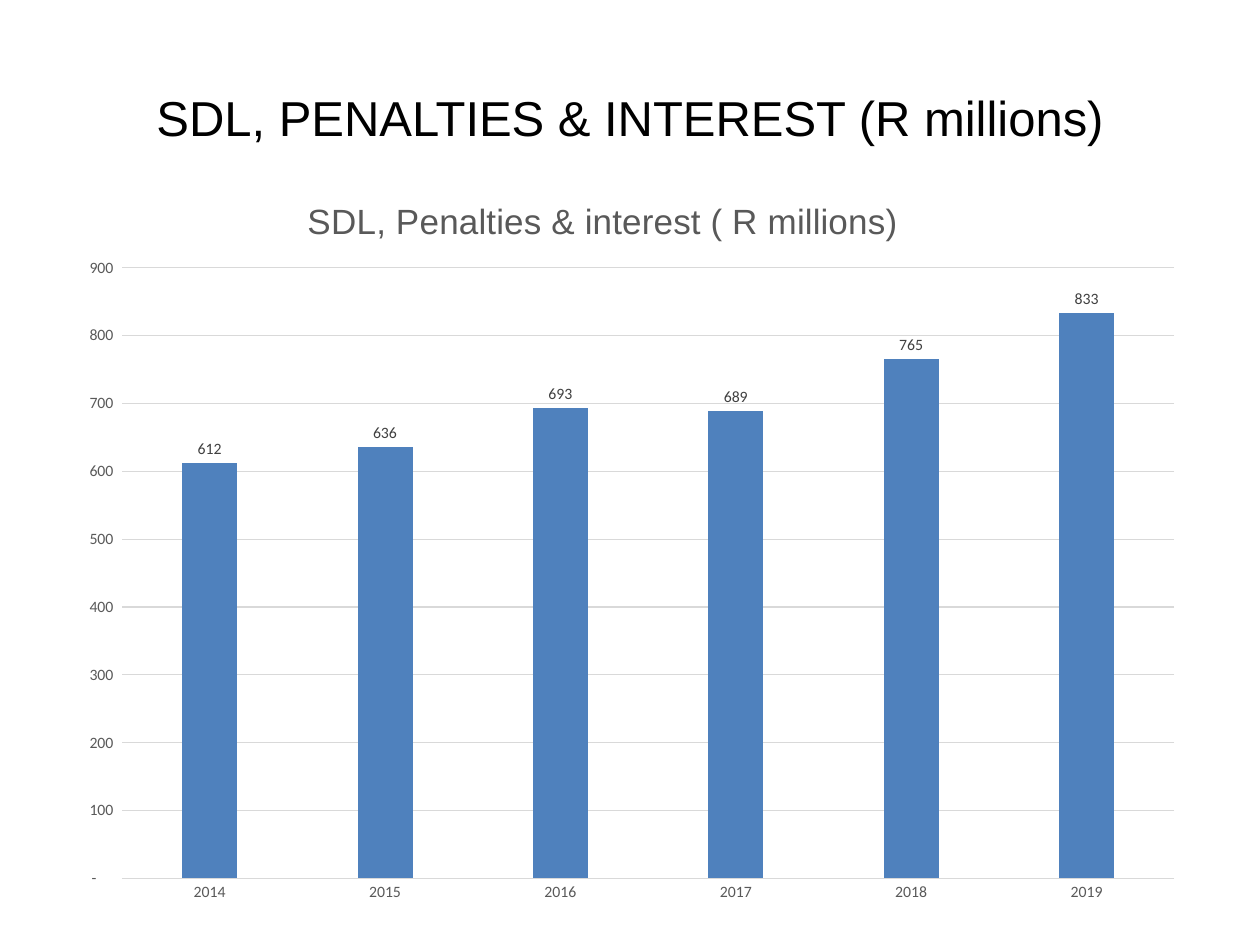
"""Build a slide with a column chart of SDL, penalties and interest by year."""
from dataclasses import dataclass
from typing import Any

import pptx
import pptx.chart.data
import pptx.dml.color
import pptx.enum.chart
import pptx.enum.text
import pptx.oxml
import pptx.oxml.ns
import pptx.util

BLACK = pptx.dml.color.RGBColor(0x00, 0x00, 0x00)
DARK_GREY = pptx.dml.color.RGBColor(0x40, 0x40, 0x40)
GREY = pptx.dml.color.RGBColor(0x59, 0x59, 0x59)
LIGHT_GREY = pptx.dml.color.RGBColor(0xD9, 0xD9, 0xD9)
BLUE = pptx.dml.color.RGBColor(0x4F, 0x81, 0xBD)

WIDTH, HEIGHT = pptx.util.Inches(10), pptx.util.Inches(7.5)
AMOUNTS = {"2014": 612, "2015": 636, "2016": 693, "2017": 689, "2018": 765, "2019": 833}
ACCOUNTING = '_ * #,##0_ ;_ * \\-#,##0_ ;_ * "-"??_ ;_ '


@dataclass(frozen=True)
class Area:
    """A rectangle in shares of its container."""

    x: float
    y: float
    w: float = 0
    h: float = 0

    def on_slide(self) -> tuple[int, int, int, int]:
        """Return left, top, width and height on the slide."""
        return (int(self.x * WIDTH), int(self.y * HEIGHT),
                int(self.w * WIDTH), int(self.h * HEIGHT))


HEADING = Area(0.05, 0.04, 0.9, 1 / 6)
CHART = Area(0.05, 0.18, 0.9, 0.79)
CHART_TITLE = Area(0.21, 0.03)
PLOT = Area(0.052, 0.131, 0.928, 0.818)


def style_font(font: Any, size: float, color: pptx.dml.color.RGBColor,
               name: str = "Calibri") -> None:
    """Set the size, colour and typeface of a font."""
    font.size, font.name, font.bold = pptx.util.Pt(size), name, False
    font.color.rgb = color


def write_text(frame: Any, text: str, **font_format: Any) -> None:
    """Write one centred paragraph with the given font format."""
    paragraph = frame.paragraphs[0]
    paragraph.alignment = pptx.enum.text.PP_ALIGN.CENTER
    run = paragraph.add_run()
    run.text = text
    style_font(run.font, name="Arial", **font_format)


def place(element: Any, area: Area, index: int, inner: bool = False) -> None:
    """Give a chart part a manual layout."""
    for old in element.findall(pptx.oxml.ns.qn("c:layout")):
        element.remove(old)
    values = {"xMode": "edge", "yMode": "edge", "x": area.x, "y": area.y}
    if inner:
        values = {"layoutTarget": "inner", **values, "w": area.w, "h": area.h}
    tags = "".join(f'<c:{tag} val="{value}"/>' for tag, value in values.items())
    element.insert(index, pptx.oxml.parse_xml(
        f'<c:layout {pptx.oxml.ns.nsdecls("c")}><c:manualLayout>{tags}'
        "</c:manualLayout></c:layout>"))


def style_line(line: Any) -> None:
    """Draw a thin light grey line."""
    line.color.rgb = LIGHT_GREY
    line.width = pptx.util.Pt(0.75)


def style_axes(chart: Any) -> None:
    """Format both axes and the gridlines."""
    for axis in (chart.category_axis, chart.value_axis):
        axis.major_tick_mark = pptx.enum.chart.XL_TICK_MARK.NONE
        axis.minor_tick_mark = pptx.enum.chart.XL_TICK_MARK.NONE
        style_font(axis.tick_labels.font, 9, GREY)
    style_line(chart.category_axis.format.line)
    amounts = chart.value_axis
    amounts.minimum_scale, amounts.maximum_scale, amounts.major_unit = 0, 900, 100
    amounts.format.line.fill.background()
    amounts.has_major_gridlines = True
    style_line(amounts.major_gridlines.format.line)
    amounts.tick_labels.number_format = ACCOUNTING
    amounts.tick_labels.number_format_is_linked = False


def style_columns(plot: Any) -> None:
    """Format the columns and their value labels."""
    plot.gap_width, plot.overlap, plot.vary_by_categories = 219, -27, False
    columns = plot.series[0]
    columns.format.fill.solid()
    columns.format.fill.fore_color.rgb = BLUE
    labels = columns.data_labels
    labels.show_value = True
    labels.position = pptx.enum.chart.XL_LABEL_POSITION.OUTSIDE_END
    style_font(labels.font, 9, DARK_GREY)


def add_amounts_chart(slide: Any) -> None:
    """Add the column chart of yearly amounts."""
    data = pptx.chart.data.CategoryChartData(number_format="#,##0")
    data.categories = list(AMOUNTS)
    data.add_series("Series 1", list(AMOUNTS.values()))
    chart = slide.shapes.add_chart(
        pptx.enum.chart.XL_CHART_TYPE.COLUMN_CLUSTERED, *CHART.on_slide(), data).chart
    chart.has_legend = False
    style_font(chart.font, 10, BLACK)
    write_text(chart.chart_title.text_frame, "SDL, Penalties & interest ( R millions)",
               size=20, color=GREY)
    chart.chart_title.include_in_layout = False
    place(chart.chart_title._element, CHART_TITLE, 1)
    place(chart._chartSpace.chart.plotArea, PLOT, 0, inner=True)
    style_axes(chart)
    style_columns(chart.plots[0])


def main() -> None:
    """Build and save the presentation."""
    deck = pptx.Presentation()
    deck.slide_width, deck.slide_height = WIDTH, HEIGHT
    slide = deck.slides.add_slide(deck.slide_layouts[5])
    heading = slide.shapes.title
    heading.left, heading.top, heading.width, heading.height = HEADING.on_slide()
    heading.text_frame.vertical_anchor = pptx.enum.text.MSO_ANCHOR.MIDDLE
    write_text(heading.text_frame, "SDL, PENALTIES & INTEREST (R millions)",
               size=28, color=BLACK)
    add_amounts_chart(slide)
    deck.save("out.pptx")


if __name__ == "__main__":
    main()
